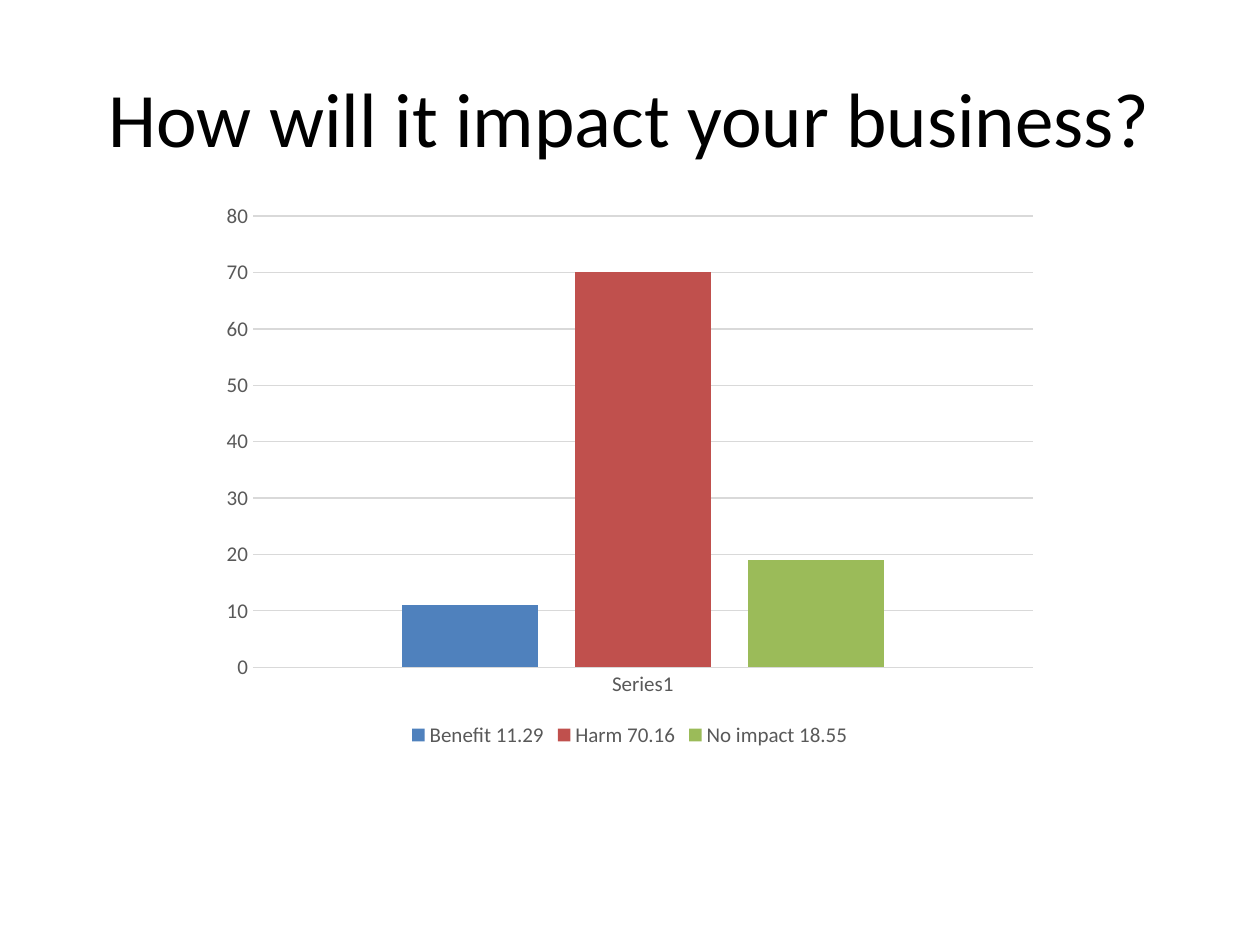
import pptx
import pptx.chart.data
import pptx.dml.color
import pptx.enum.chart
import pptx.enum.text
import pptx.util
from pptx.util import Cm

FONT = "Calibri"
BLACK = pptx.dml.color.RGBColor(0x00, 0x00, 0x00)
GRAY = pptx.dml.color.RGBColor(0x59, 0x59, 0x59)
LIGHT_GRAY = pptx.dml.color.RGBColor(0xD9, 0xD9, 0xD9)
BLUE = pptx.dml.color.RGBColor(0x4F, 0x81, 0xBD)
RED = pptx.dml.color.RGBColor(0xC0, 0x50, 0x4D)
GREEN = pptx.dml.color.RGBColor(0x9B, 0xBB, 0x59)

ANSWERS = [
    ("Benefit 11.29", 11, BLUE),
    ("Harm 70.16", 70, RED),
    ("No impact 18.55", 19, GREEN),
]


def format_font(font, size, color):
    font.name = FONT
    font.size = pptx.util.Pt(size)
    font.color.rgb = color


def format_line(line):
    line.color.rgb = LIGHT_GRAY
    line.width = pptx.util.Pt(0.75)


def add_text(slide, text, *, left, top, width, height, size, color):
    shape = slide.shapes.add_textbox(left, top, width, height)
    frame = shape.text_frame
    frame.word_wrap = True
    frame.vertical_anchor = pptx.enum.text.MSO_ANCHOR.MIDDLE
    paragraph = frame.paragraphs[0]
    paragraph.alignment = pptx.enum.text.PP_ALIGN.CENTER
    run = paragraph.add_run()
    run.text = text
    format_font(run.font, size, color)


def format_axes(chart):
    for axis in (chart.category_axis, chart.value_axis):
        axis.major_tick_mark = pptx.enum.chart.XL_TICK_MARK.NONE
        axis.minor_tick_mark = pptx.enum.chart.XL_TICK_MARK.NONE
        format_font(axis.tick_labels.font, 12, GRAY)
    format_line(chart.category_axis.format.line)
    value_axis = chart.value_axis
    value_axis.minimum_scale = 0
    value_axis.maximum_scale = 80
    value_axis.major_unit = 10
    value_axis.format.line.fill.background()
    format_line(value_axis.major_gridlines.format.line)


def add_answer_chart(slide, left, top, width, height):
    data = pptx.chart.data.CategoryChartData()
    data.categories = ["Series1"]
    for label, share, _ in ANSWERS:
        data.add_series(label, [share])
    chart = slide.shapes.add_chart(
        pptx.enum.chart.XL_CHART_TYPE.COLUMN_CLUSTERED,
        left, top, width, height, data,
    ).chart
    chart.has_title = False
    format_font(chart.font, 10, BLACK)
    format_axes(chart)
    plot = chart.plots[0]
    plot.gap_width = 219
    plot.overlap = -27
    plot.vary_by_categories = False
    for series, (_, _, color) in zip(plot.series, ANSWERS):
        series.format.fill.solid()
        series.format.fill.fore_color.rgb = color
    chart.has_legend = True
    chart.legend.position = pptx.enum.chart.XL_LEGEND_POSITION.BOTTOM
    chart.legend.include_in_layout = False
    format_font(chart.legend.font, 12, GRAY)


def main():
    presentation = pptx.Presentation()
    presentation.slide_width = Cm(25.4)
    presentation.slide_height = Cm(19.05)
    slide = presentation.slides.add_slide(presentation.slide_layouts[6])
    add_text(
        slide, "How will it impact your business?",
        left=Cm(1.27), top=Cm(0.76), width=Cm(22.86), height=Cm(3.18),
        size=44, color=BLACK,
    )
    add_answer_chart(slide, Cm(4.23), Cm(3.88), Cm(16.93), Cm(11.29))
    presentation.save("out.pptx")


if __name__ == "__main__":
    main()
